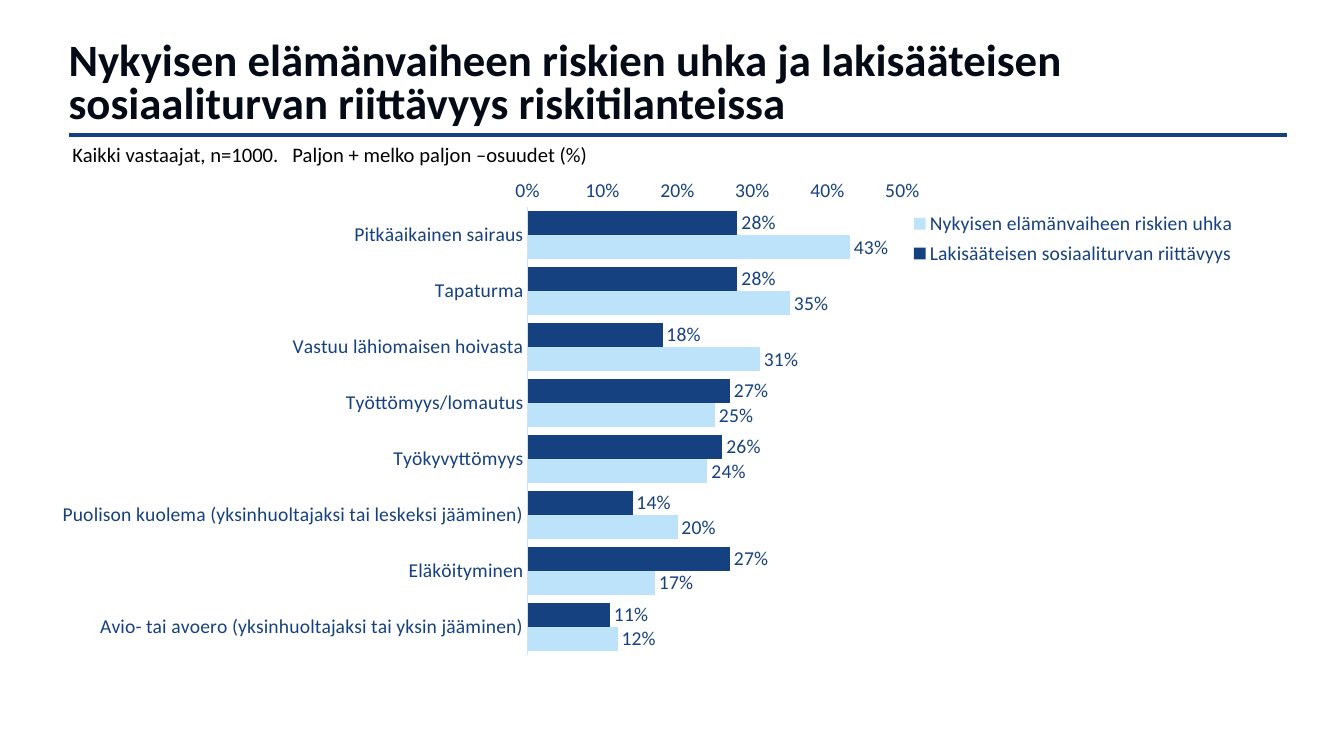
from dataclasses import dataclass

from lxml.etree import SubElement
from pptx import Presentation
from pptx.chart.data import CategoryChartData
from pptx.dml.color import RGBColor
from pptx.enum.chart import XL_AXIS_CROSSES as Crosses
from pptx.enum.chart import XL_CHART_TYPE as ChartType
from pptx.enum.chart import XL_LABEL_POSITION as LabelPosition
from pptx.enum.chart import XL_LEGEND_POSITION as LegendPosition
from pptx.enum.chart import XL_TICK_MARK as TickMark
from pptx.enum.shapes import MSO_CONNECTOR as Connector
from pptx.enum.text import MSO_ANCHOR as Anchor
from pptx.enum.text import PP_ALIGN as Align
from pptx.oxml.ns import qn
from pptx.util import Inches, Pt


@dataclass(frozen=True)
class Theme:
    font: str = "Calibri"
    title_color: RGBColor = RGBColor.from_string("040B16")
    text_color: RGBColor = RGBColor.from_string("000000")
    navy: RGBColor = RGBColor.from_string("164180")
    sky: RGBColor = RGBColor.from_string("BCE3FA")
    axis_color: RGBColor = RGBColor.from_string("D1E0F7")
    title_size: float = 32
    subtitle_size: float = 14.7
    chart_size: float = 14


@dataclass(frozen=True)
class Measure:
    name: str
    shares: tuple[float, ...]
    color: RGBColor


@dataclass(frozen=True)
class Layout:
    """Place inside the chart, as fractions of its size."""
    x: float
    y: float
    w: float
    h: float


THEME = Theme()
PLOT = Layout(0.39, 0.062, 0.316, 0.823)
LEGEND = Layout(0.71, 0.06, 0.28, 0.12)

TITLE = ("Nykyisen elämänvaiheen riskien uhka ja lakisääteisen "
         "sosiaaliturvan riittävyys riskitilanteissa")
SUBTITLE = "Kaikki vastaajat, n=1000.   Paljon + melko paljon –osuudet (%)"
RISKS = (
    "Pitkäaikainen sairaus",
    "Tapaturma",
    "Vastuu lähiomaisen hoivasta",
    "Työttömyys/lomautus",
    "Työkyvyttömyys",
    "Puolison kuolema (yksinhuoltajaksi tai leskeksi jääminen)",
    "Eläköityminen",
    "Avio- tai avoero (yksinhuoltajaksi tai yksin jääminen)",
)
MEASURES = (
    Measure("Lakisääteisen sosiaaliturvan riittävyys",
            (0.28, 0.28, 0.18, 0.27, 0.26, 0.14, 0.27, 0.11), THEME.navy),
    Measure("Nykyisen elämänvaiheen riskien uhka",
            (0.43, 0.35, 0.31, 0.25, 0.24, 0.20, 0.17, 0.12), THEME.sky),
)


def write_text(box, text: str, size: float, color: RGBColor,
               bold: bool = False, spacing: float = 1.0) -> None:
    frame = box.text_frame
    frame.text = text
    frame.word_wrap = True
    frame.vertical_anchor = Anchor.TOP
    para = frame.paragraphs[0]
    para.alignment = Align.LEFT
    para.line_spacing = spacing
    para.space_before = Pt(0)
    font = para.runs[0].font
    font.name, font.size, font.bold = THEME.font, Pt(size), bold
    font.color.rgb = color


def add_layout(parent, place: Layout, inner: bool = False):
    """Append a manual layout to a chart part and return it."""
    layout = SubElement(parent, qn("c:layout"))
    manual = SubElement(layout, qn("c:manualLayout"))
    settings = [("layoutTarget", "inner")] if inner else []
    settings += [("xMode", "edge"), ("yMode", "edge")]
    settings += [(key, str(getattr(place, key))) for key in "xywh"]
    for tag, value in settings:
        SubElement(manual, qn(f"c:{tag}")).set("val", value)
    return layout


def add_heading(page) -> None:
    title = page.shapes.title
    title.left, title.top = Inches(0.58), Inches(0.37)
    title.width, title.height = Inches(11.86), Inches(0.97)
    write_text(title, TITLE, THEME.title_size, THEME.title_color, True, 0.8)

    subtitle = page.shapes.add_textbox(Inches(0.62), Inches(1.36),
                                       Inches(11.71), Inches(0.35))
    write_text(subtitle, SUBTITLE, THEME.subtitle_size, THEME.text_color)


def add_rule(page) -> None:
    rule = page.shapes.add_connector(Connector.STRAIGHT, Inches(0.68),
                                     Inches(1.34), Inches(12.76), Inches(1.34))
    rule.line.color.rgb = THEME.navy
    rule.line.width = Pt(2.25)
    SubElement(rule._element.spPr, qn("a:effectLst"))


def format_axes(chart) -> None:
    # Reversed categories keep the first risk on top and the scale below
    risks = chart.category_axis
    risks.reverse_order = True
    risks.crosses = Crosses.MAXIMUM
    risks.format.line.color.rgb = THEME.axis_color
    risks.format.line.width = Pt(0.75)

    scale = chart.value_axis
    scale.minimum_scale, scale.maximum_scale = 0, 0.5
    scale.major_unit = 0.1
    scale.tick_labels.number_format = "0%"
    scale.tick_labels.number_format_is_linked = False
    scale.format.line.fill.background()

    for axis in (risks, scale):
        axis.has_major_gridlines = False
        axis.major_tick_mark = axis.minor_tick_mark = TickMark.NONE


def format_bars(chart) -> None:
    plot = chart.plots[0]
    plot.gap_width = 30
    plot.overlap = 0
    plot.vary_by_categories = False
    for series, measure in zip(plot.series, MEASURES):
        series.format.fill.solid()
        series.format.fill.fore_color.rgb = measure.color
        labels = series.data_labels
        labels.show_value = True
        labels.number_format = "0%"
        labels.number_format_is_linked = False
        labels.position = LabelPosition.OUTSIDE_END


def add_risk_chart(page) -> None:
    data = CategoryChartData(number_format="0%")
    data.categories = RISKS
    for measure in MEASURES:
        data.add_series(measure.name, measure.shares)
    chart = page.shapes.add_chart(ChartType.BAR_CLUSTERED, Inches(0.62),
                                  Inches(1.72), Inches(11.79), Inches(5.4),
                                  data).chart
    chart.has_title = False
    chart.font.name, chart.font.size = THEME.font, Pt(THEME.chart_size)
    chart.font.color.rgb = THEME.navy
    format_axes(chart)
    format_bars(chart)

    # Legend to the right of the bars
    chart.has_legend = True
    legend = chart.legend
    legend.position = LegendPosition.BOTTOM
    legend.include_in_layout = False
    for old in legend._element.findall(qn("c:layout")):
        legend._element.remove(old)
    legend_layout = add_layout(legend._element, LEGEND)
    legend._element.find(qn("c:legendPos")).addnext(legend_layout)

    # Plot area
    area = chart._chartSpace.chart.plotArea
    for old in area.findall(qn("c:layout")):
        area.remove(old)
    area.insert(0, add_layout(area, PLOT, inner=True))


def main() -> None:
    deck = Presentation()
    deck.slide_width, deck.slide_height = Inches(13.33), Inches(7.5)
    page = deck.slides.add_slide(deck.slide_layouts.get_by_name("Title Only"))
    add_risk_chart(page)
    add_heading(page)
    add_rule(page)
    deck.save("out.pptx")


if __name__ == "__main__":
    main()
